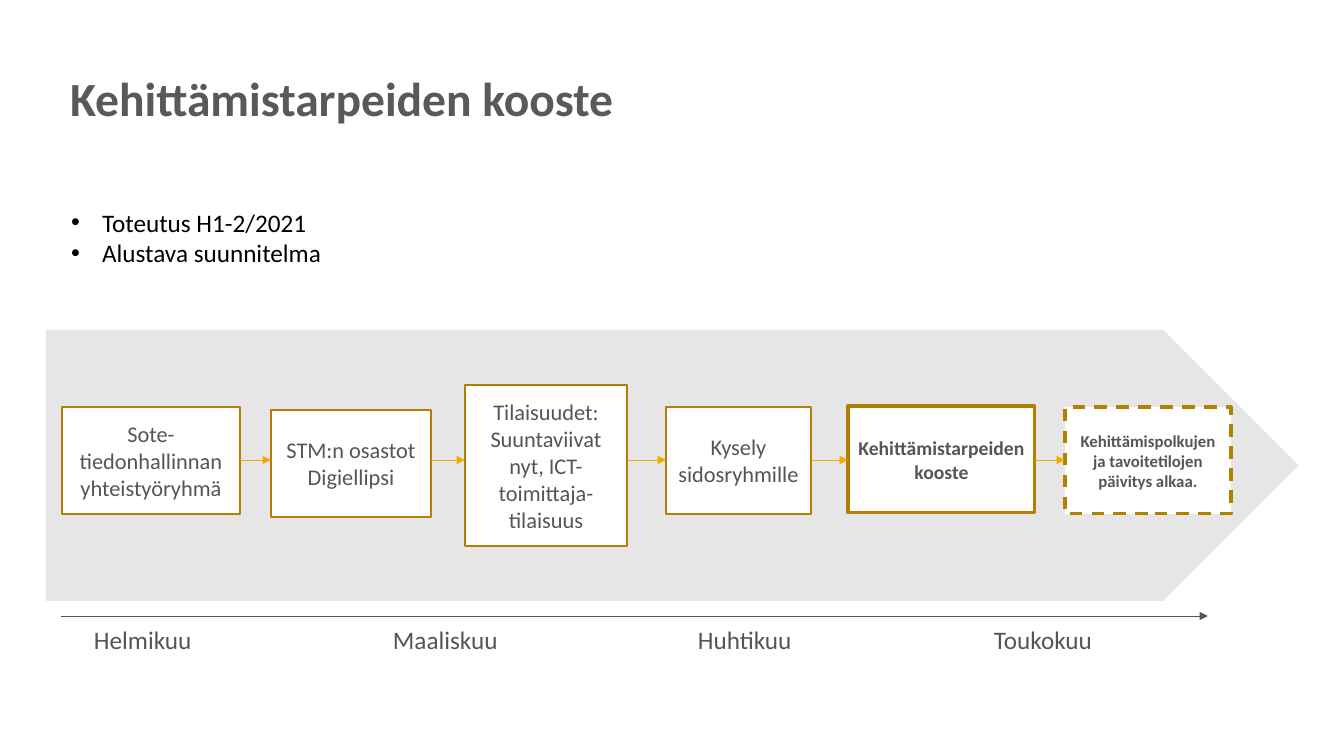
from dataclasses import dataclass
from itertools import pairwise

from lxml.etree import SubElement
from pptx import Presentation
from pptx.dml.color import RGBColor
from pptx.enum.dml import MSO_LINE
from pptx.enum.shapes import MSO_CONNECTOR, MSO_SHAPE
from pptx.enum.text import MSO_ANCHOR, MSO_AUTO_SIZE, PP_ALIGN
from pptx.oxml.ns import qn
from pptx.util import Emu, Pt


@dataclass(frozen=True)
class Theme:
    font: str = "Calibri"
    title: str = "595959"
    ink: str = "535659"
    bullet_ink: str = "000000"
    band: str = "E7E6E6"
    box_fill: str = "FFFFFF"
    box_line: str = "B27F00"
    arrow: str = "F0AB00"
    title_size: int = 34
    text_size: int = 18
    step_size: int = 16
    result_size: int = 14
    next_size: int = 12
    thin: float = 0.5
    normal: float = 1
    thick: float = 2.25


THEME = Theme()
EMU_PER_PX = 914400 / 100.8

# Each step: left, top, width, height, paragraphs, text size, line width, dashed
STEPS = [
    (62, 407, 178, 107, ["Sote-tiedonhallinnan", "yhteistyöryhmä"],
     THEME.step_size, THEME.normal, False),
    (271, 410, 160, 107, ["STM:n osastot Digiellipsi"],
     THEME.step_size, THEME.normal, False),
    (465, 385, 162, 161, ["Tilaisuudet: Suuntaviivat nyt, ICT-toimittaja-tilaisuus"],
     THEME.step_size, THEME.normal, False),
    (666, 407, 145, 107, ["Kysely sidosryhmille"],
     THEME.step_size, THEME.normal, False),
    (848, 406, 187, 107, ["Kehittämistarpeiden kooste"],
     THEME.result_size, THEME.thick, False),
    (1065, 407, 166, 107, ["Kehittämispolkujen ja tavoitetilojen päivitys alkaa."],
     THEME.next_size, THEME.thick, True),
]
MONTHS = [("Helmikuu", 84, 119), ("Maaliskuu", 383, 126),
          ("Huhtikuu", 688, 115), ("Toukokuu", 984, 119)]
BULLETS = ["Toteutus H1-2/2021", "Alustava suunnitelma"]


def px(length):
    return Emu(round(length * EMU_PER_PX))


def color(code):
    return RGBColor.from_string(code)


def place(shape, left, top, width, height):
    shape.left, shape.top = px(left), px(top)
    shape.width, shape.height = px(width), px(height)


def write(frame, texts, size, ink, bold=False, align=PP_ALIGN.LEFT):
    """Fill a text frame with one paragraph per text."""
    for index, text in enumerate(texts):
        para = frame.add_paragraph() if index else frame.paragraphs[0]
        para.alignment = align
        para.space_before = Pt(0)
        span = para.add_run()
        span.text = text
        span.font.name = THEME.font
        span.font.size = Pt(size)
        span.font.bold = bold
        span.font.color.rgb = color(ink)


def set_title(page, text):
    title = page.shapes.title
    place(title, 60, 40, 1123, 146)
    frame = title.text_frame
    frame.auto_size = MSO_AUTO_SIZE.NONE
    frame.vertical_anchor = MSO_ANCHOR.MIDDLE
    frame.margin_bottom = px(37)
    write(frame, [text], THEME.title_size, THEME.title, bold=True)


def set_bullets(page, texts):
    body = page.placeholders[1]
    place(body, 61, 202, 1089, 71)
    frame = body.text_frame
    frame.auto_size = MSO_AUTO_SIZE.NONE
    write(frame, texts, THEME.text_size, THEME.bullet_ink)
    for para in frame.paragraphs:
        properties = para._p.get_or_add_pPr()
        properties.set("marL", str(px(31)))
        properties.set("indent", str(px(-31)))
        SubElement(properties, qn("a:buFont")).set("typeface", "Arial")
        SubElement(properties, qn("a:buChar")).set("char", "•")


def add_band(page):
    band = page.shapes.add_shape(
        MSO_SHAPE.PENTAGON, px(46), px(330), px(1253), px(271))
    band.shadow.inherit = False
    band.fill.solid()
    band.fill.fore_color.rgb = color(THEME.band)
    band.line.fill.background()


def add_step(page, left, top, width, height, texts, size, line_width, dashed):
    box = page.shapes.add_shape(
        MSO_SHAPE.RECTANGLE, px(left), px(top), px(width), px(height))
    box.shadow.inherit = False
    box.fill.solid()
    box.fill.fore_color.rgb = color(THEME.box_fill)
    box.line.color.rgb = color(THEME.box_line)
    box.line.width = Pt(line_width)
    if dashed:
        box.line.dash_style = MSO_LINE.DASH
    frame = box.text_frame
    frame.word_wrap = True
    frame.vertical_anchor = MSO_ANCHOR.MIDDLE
    write(frame, texts, size, THEME.ink, bold=size < THEME.step_size,
          align=PP_ALIGN.CENTER)


def add_arrow(page, start, end, height, ink):
    arrow = page.shapes.add_connector(
        MSO_CONNECTOR.STRAIGHT, px(start), px(height), px(end), px(height))
    arrow.line.color.rgb = color(ink)
    arrow.line.width = Pt(THEME.thin)
    SubElement(arrow.line._get_or_add_ln(), qn("a:tailEnd")).set("type", "triangle")
    SubElement(arrow._element.spPr, qn("a:effectLst"))


def add_month(page, name, left, width):
    box = page.shapes.add_textbox(px(left), px(619), px(width), px(40))
    frame = box.text_frame
    frame.word_wrap = False
    frame.auto_size = MSO_AUTO_SIZE.SHAPE_TO_FIT_TEXT
    write(frame, [name], THEME.text_size, THEME.ink)


def main():
    deck = Presentation()
    deck.slide_width, deck.slide_height = px(1344), px(756)
    page = deck.slides.add_slide(deck.slide_layouts[1])

    # Heading and bullets
    set_title(page, "Kehittämistarpeiden kooste")
    set_bullets(page, BULLETS)

    # Timeline with months
    add_arrow(page, 61, 1208, 616, THEME.ink)
    for month in MONTHS:
        add_month(page, *month)

    # Process band, steps and the arrows across their gaps
    add_band(page)
    for step in STEPS:
        add_step(page, *step)
    for (left, _, width, *_), (next_left, *_) in pairwise(STEPS):
        add_arrow(page, left + width, next_left, 460, THEME.arrow)

    deck.save("out.pptx")


if __name__ == "__main__":
    main()
